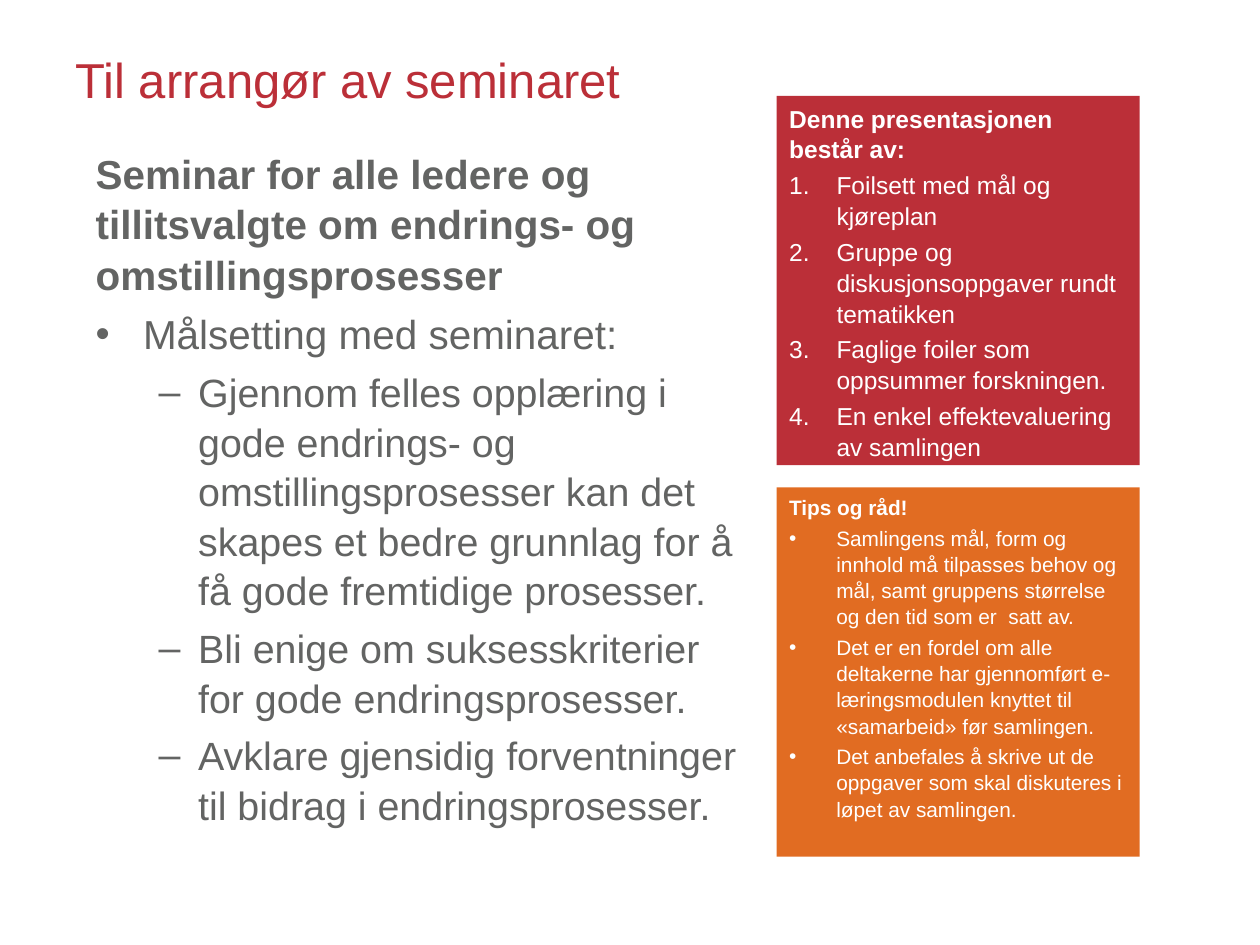
from lxml import etree
from pptx import Presentation
from pptx.dml.color import RGBColor
from pptx.enum.shapes import MSO_SHAPE as SHAPE
from pptx.enum.text import MSO_ANCHOR as ANCHOR, MSO_AUTO_SIZE as AUTOSIZE, PP_ALIGN as ALIGN
from pptx.oxml.ns import qn
from pptx.util import Pt

RED = RGBColor(0xBB, 0x2F, 0x38)
ORANGE = RGBColor(0xE1, 0x6C, 0x22)
GREY = RGBColor(0x63, 0x64, 0x63)
WHITE = RGBColor(0xFF, 0xFF, 0xFF)

# Kinds of paragraph: level, left margin, hanging indent, bullet tag, bullet attributes
HEADING = (0, 0, 0, "a:buNone", {})
BULLET = (0, 27, 27, "a:buChar", {"char": "•"})
NUMBER = (0, 27, 27, "a:buAutoNum", {"type": "arabicPeriod"})
DASH = (1, 58.5, 22.5, "a:buChar", {"char": "–"})


class SlideBuilder:
    font = "Arial"
    line_spacing = 1.05
    space_ratio = 0.2

    def __init__(self, slide):
        self.slide = slide

    def place(self, sp, left, top, width, height):
        sp.left, sp.top, sp.width, sp.height = map(Pt, (left, top, width, height))

    def frame(self, sp, anchor):
        tf = sp.text_frame
        tf.word_wrap = True
        tf.auto_size = AUTOSIZE.NONE
        tf.vertical_anchor = anchor
        return tf

    def style(self, p, size, color, bold=False):
        for r in p.runs:
            r.font.name, r.font.size, r.font.bold = self.font, Pt(size), bold
            r.font.color.rgb = color

    def title(self, text, box, size, color):
        sp = self.slide.shapes.title
        self.place(sp, *box)
        tf = self.frame(sp, ANCHOR.MIDDLE)
        tf.text = text
        p = tf.paragraphs[0]
        p.alignment = ALIGN.LEFT
        self.style(p, size, color)

    def paragraph(self, p, text, kind, size, color, first):
        level, margin, hanging, tag, attributes = kind
        p.text = text
        p.level = level
        p.alignment = ALIGN.LEFT
        p.line_spacing = self.line_spacing
        p.space_before = Pt(0 if first else round(size * self.space_ratio, 1))
        pPr = p._p.get_or_add_pPr()
        pPr.set("marL", str(Pt(margin)))
        pPr.set("indent", str(-Pt(hanging)))
        if kind is not HEADING:
            etree.SubElement(pPr, qn("a:buFont"), typeface=self.font)
        etree.SubElement(pPr, qn(tag), attributes)
        self.style(p, size, color, bold=kind is HEADING)

    def text_list(self, sp, items, sizes, color):
        tf = self.frame(sp, ANCHOR.TOP)
        for i, (kind, text) in enumerate(items):
            p = tf.add_paragraph() if i else tf.paragraphs[0]
            self.paragraph(p, text, kind, sizes[kind[0]], color, first=i == 0)

    def body(self, idx, items, box, sizes, color, fill=None):
        sp = self.slide.placeholders[idx]
        self.place(sp, *box)
        if fill is not None:
            sp.fill.solid()
            sp.fill.fore_color.rgb = fill
        self.text_list(sp, items, sizes, color)

    def panel(self, items, box, sizes, color, fill):
        sp = self.slide.shapes.add_shape(SHAPE.RECTANGLE, *map(Pt, box))
        sp.shadow.inherit = False
        sp.fill.solid()
        sp.fill.fore_color.rgb = fill
        sp.line.fill.background()
        self.text_list(sp, items, sizes, color)


def main():
    prs = Presentation()
    prs.slide_width, prs.slide_height = Pt(720), Pt(540)
    s = SlideBuilder(prs.slides.add_slide(prs.slide_layouts[3]))

    # Title and main text
    s.title("Til arrangør av seminaret", (36, 21.6, 648, 46.8), 28, RED)
    s.body(1, [
        (HEADING, "Seminar for alle ledere og tillitsvalgte om endrings- og omstillingsprosesser"),
        (BULLET, "Målsetting med seminaret:"),
        (DASH, "Gjennom felles opplæring i gode endrings- og omstillingsprosesser kan det "
               "skapes et bedre grunnlag for å få gode fremtidige prosesser."),
        (DASH, "Bli enige om suksesskriterier for gode endringsprosesser."),
        (DASH, "Avklare gjensidig forventninger til bidrag i endringsprosesser."),
    ], (47.5, 80, 389, 397.5), (23.1, 22.5), GREY)

    # Side panels, one above the other
    left, top, width, height, gap = 443.8, 54.8, 207.4, 211, 12.8
    s.body(2, [
        (HEADING, "Denne presentasjonen består av:"),
        (NUMBER, "Foilsett med mål og kjøreplan"),
        (NUMBER, "Gruppe og diskusjonsoppgaver rundt tematikken"),
        (NUMBER, "Faglige foiler som oppsummer forskningen."),
        (NUMBER, "En enkel effektevaluering av samlingen"),
    ], (left, top, width, height), (14,), WHITE, RED)
    s.panel([
        (HEADING, "Tips og råd!"),
        (BULLET, "Samlingens mål, form og innhold må tilpasses behov og mål, "
                 "samt gruppens størrelse og den tid som er  satt av."),
        (BULLET, "Det er en fordel om alle deltakerne har gjennomført e-læringsmodulen "
                 "knyttet til «samarbeid» før samlingen."),
        (BULLET, "Det anbefales å skrive ut de oppgaver som skal diskuteres i løpet av samlingen."),
    ], (left, top + height + gap, width, height), (11.9,), WHITE, ORANGE)

    prs.save("out.pptx")


if __name__ == "__main__":
    main()
